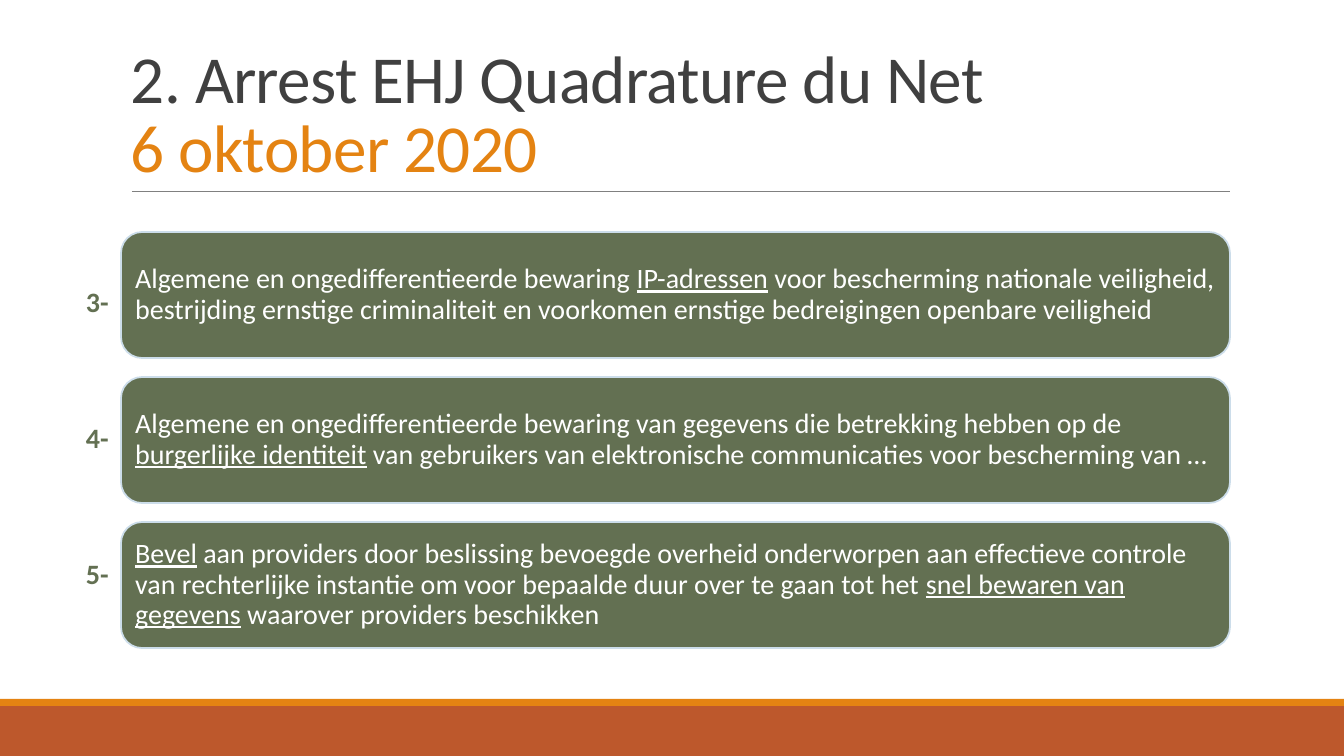
import pptx
import pptx.util
import pptx.dml.color
import pptx.enum.shapes
import pptx.enum.text
import pptx.oxml

SCALE = 914400 / 100.8
COLORS = {
    "rust": "BD582C",
    "orange": "E48312",
    "rule": "808080",
    "title": "404040",
    "green": "637052",
    "border": "CCDDEA",
    "white": "FFFFFF",
}
SHAPES = pptx.enum.shapes.MSO_SHAPE
ANCHOR = pptx.enum.text.MSO_ANCHOR
ALIGN = pptx.enum.text.PP_ALIGN


def px(*lengths):
    return [pptx.util.Emu(round(n * SCALE)) for n in lengths]


def style(r, size, color):
    r.font.name = "Calibri"
    r.font.size = pptx.util.Pt(size)
    r.font.color.rgb = pptx.dml.color.RGBColor.from_string(COLORS[color])


prs = pptx.Presentation()
prs.slide_width, prs.slide_height = px(1344, 756)
slide = prs.slides.add_slide(prs.slide_layouts[6])

for top, height, color in [(706, 50, "rust"), (699, 7, "orange")]:
    sp = slide.shapes.add_shape(SHAPES.RECTANGLE, *px(0, top, 1344, height))
    sp.shadow.inherit = False
    sp.fill.solid()
    sp.fill.fore_color.rgb = pptx.dml.color.RGBColor.from_string(COLORS[color])
    sp.line.fill.background()

rule = slide.shapes.add_connector(
    pptx.enum.shapes.MSO_CONNECTOR.STRAIGHT, *px(132, 191, 1230, 191))
rule.line.color.rgb = pptx.dml.color.RGBColor.from_string(COLORS["rule"])
rule.line.width = pptx.util.Pt(0.5)
rule._element.spPr.append(pptx.oxml.parse_xml(
    '<a:effectLst xmlns:a="http://schemas.openxmlformats.org/drawingml/2006/main"/>'))

title = slide.shapes.add_textbox(*px(121, 31, 1109, 160))
tf = title.text_frame
tf.word_wrap = True
tf.vertical_anchor = ANCHOR.BOTTOM
p = tf.paragraphs[0]
p.text = "2. Arrest EHJ Quadrature du Net\v6 oktober 2020"
p.line_spacing = 0.85
for r, color in zip(p.runs, ["title", "orange"]):
    style(r, 48, color)
    r.font._element.set("spc", "-50")

measures = [
    ("3-", [
        ("Algemene en ongedifferentieerde bewaring ", False),
        ("IP-adressen", True),
        (" voor bescherming nationale veiligheid, bestrijding ernstige criminaliteit "
         "en voorkomen ernstige bedreigingen openbare veiligheid", False),
    ]),
    ("4-", [
        ("Algemene en ongedifferentieerde bewaring van gegevens die betrekking "
         "hebben op de ", False),
        ("burgerlijke identiteit", True),
        (" van gebruikers van elektronische communicaties voor bescherming van …", False),
    ]),
    ("5-", [
        ("Bevel", True),
        (" aan providers door beslissing bevoegde overheid onderworpen aan effectieve "
         "controle van rechterlijke instantie om voor bepaalde duur over te gaan tot "
         "het ", False),
        ("snel bewaren van gegevens", True),
        (" waarover providers beschikken", False),
    ]),
]

for i, (number, parts) in enumerate(measures):
    sp = slide.shapes.add_shape(
        SHAPES.ROUNDED_RECTANGLE, *px(121, 232 + 145 * i, 1109, 126))
    sp.shadow.inherit = False
    sp.fill.solid()
    sp.fill.fore_color.rgb = pptx.dml.color.RGBColor.from_string(COLORS["green"])
    sp.line.color.rgb = pptx.dml.color.RGBColor.from_string(COLORS["border"])
    sp.line.width = pptx.util.Pt(1.25)
    tf = sp.text_frame
    tf.word_wrap = True
    tf.vertical_anchor = ANCHOR.MIDDLE
    tf.margin_left, tf.margin_right, tf.margin_top, tf.margin_bottom = px(8, 8, 8, 8)
    p = tf.paragraphs[0]
    p.alignment = ALIGN.LEFT
    p.line_spacing = 0.9
    for text, underlined in parts:
        r = p.add_run()
        r.text = text
        style(r, 20, "white")
        r.font.underline = underlined

    label = slide.shapes.add_textbox(*px(76, 280 + 136 * i, 56, 44))
    tf = label.text_frame
    tf.word_wrap = True
    tf.text = number
    r = tf.paragraphs[0].runs[0]
    style(r, 20, "green")
    r.font.bold = True

prs.save("out.pptx")
